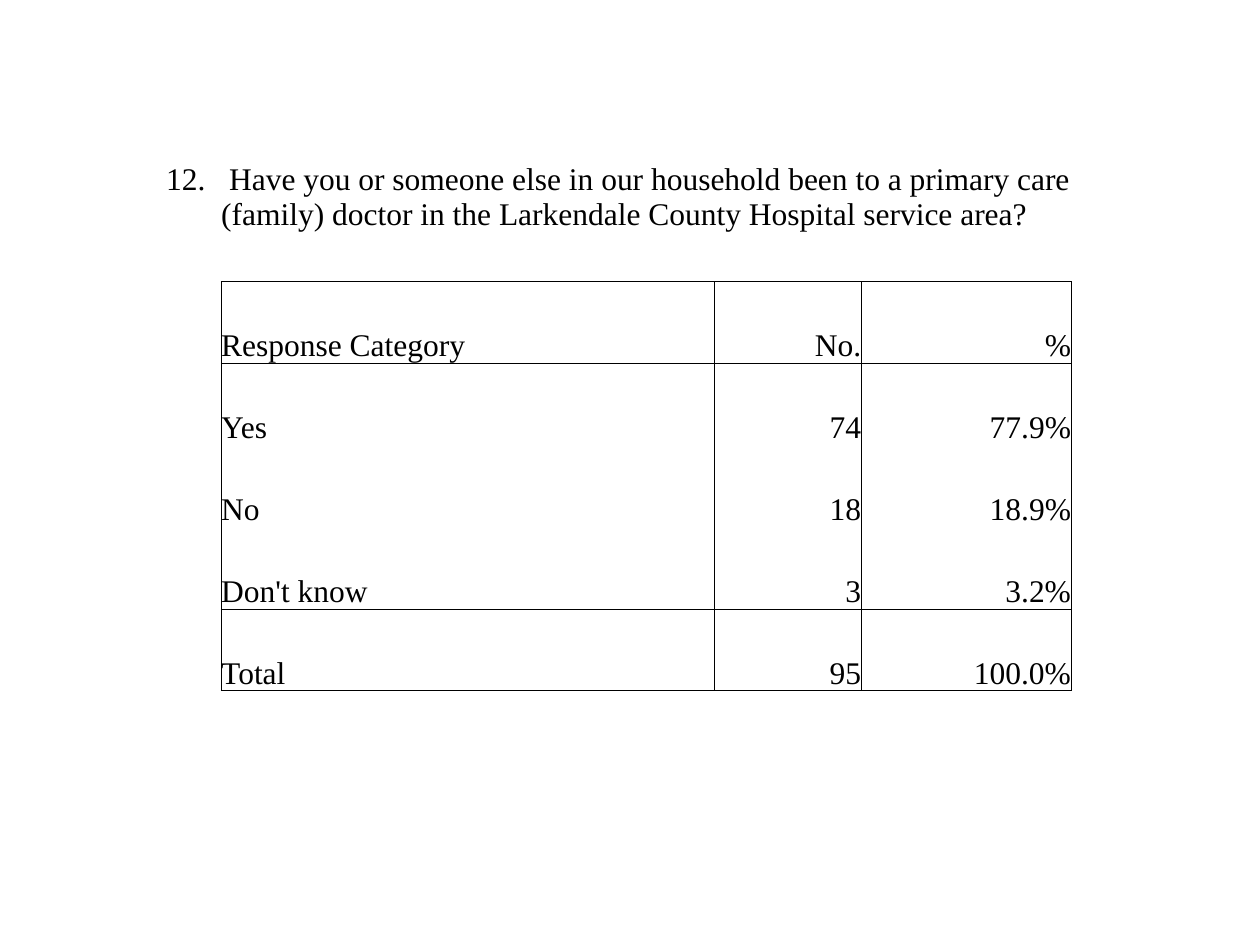
from dataclasses import dataclass

from lxml import etree
from pptx import Presentation
from pptx.dml.color import RGBColor
from pptx.enum.text import MSO_ANCHOR, PP_ALIGN
from pptx.oxml.ns import qn
from pptx.util import Cm, Pt

LEFT, RIGHT = PP_ALIGN.LEFT, PP_ALIGN.RIGHT
TOP, BOTTOM = MSO_ANCHOR.TOP, MSO_ANCHOR.BOTTOM


@dataclass(frozen=True)
class Theme:
    font: str = "Times New Roman"
    size: float = 18
    ink: str = "000000"
    line: float = 0.5


THEME = Theme()
NUMBER = "12."
QUESTION = (" Have you or someone else in our household been to a primary care "
            "(family) doctor in the Larkendale County Hospital service area?")
RESPONSES = [
    ("Response Category", "No.", "%"),
    ("Yes", "74", "77.9%"),
    ("No", "18", "18.9%"),
    ("Don't know", "3", "3.2%"),
    ("Total", "95", "100.0%"),
]
COL_WIDTHS = (1.28, 9.94, 2.96, 4.23)
QUESTION_HEIGHT, GAP_HEIGHT, RESPONSE_HEIGHT = 0.84, 0.99, 1.65
FIRST_RESPONSE = 2


def set_borders(cell, sides):
    tc_pr = cell._tc.get_or_add_tcPr()
    for side in "LRTB":
        ln = etree.SubElement(tc_pr, qn(f"a:ln{side}"), w=str(Pt(THEME.line)))
        if side in sides:
            fill = etree.SubElement(ln, qn("a:solidFill"))
            etree.SubElement(fill, qn("a:srgbClr"), val=THEME.ink)
        else:
            etree.SubElement(ln, qn("a:noFill"))


def response_sides(row, col):
    last = FIRST_RESPONSE + len(RESPONSES) - 1
    ruled = {FIRST_RESPONSE, FIRST_RESPONSE + 1, last, last + 1}
    if col == 0:
        return "R" if row >= FIRST_RESPONSE else ""
    sides = "LR" if row >= FIRST_RESPONSE else ""
    return sides + "T" * (row in ruled) + "B" * (row + 1 in ruled)


def write_cell(cell, text="", align=LEFT, anchor=BOTTOM, sides="", margin_right=0):
    set_borders(cell, sides)
    cell.fill.background()
    cell.margin_left = cell.margin_top = cell.margin_bottom = 0
    cell.margin_right = Cm(margin_right)
    cell.vertical_anchor = anchor
    p = cell.text_frame.paragraphs[0]
    p.text = text
    p.alignment = align
    p.font.name = THEME.font
    p.font.size = Pt(THEME.size)
    p.font.color.rgb = RGBColor.from_string(THEME.ink)


def add_question_table(s, left, top, width, height):
    heights = [QUESTION_HEIGHT, GAP_HEIGHT] + [RESPONSE_HEIGHT] * len(RESPONSES)
    table = s.shapes.add_table(len(heights), len(COL_WIDTHS), Cm(left), Cm(top),
                               Cm(width), Cm(height)).table
    table.first_row = table.horz_banding = False
    for column, col_width in zip(table.columns, COL_WIDTHS):
        column.width = Cm(col_width)
    for row, row_height in zip(table.rows, heights):
        row.height = Cm(row_height)

    texts = [(NUMBER, QUESTION, "", ""), ("",) * 4]
    texts += [("", *response) for response in RESPONSES]
    for r, row_texts in enumerate(texts):
        for c, text in enumerate(row_texts):
            is_number = (r, c) == (0, 0)
            write_cell(table.cell(r, c), text,
                       align=RIGHT if c > 1 or is_number else LEFT,
                       anchor=TOP if is_number else BOTTOM,
                       sides=response_sides(r, c),
                       margin_right=0.32 if is_number else 0)
    table.cell(0, 1).merge(table.cell(0, 3))


def main():
    prs = Presentation()
    prs.slide_width, prs.slide_height = Cm(25.4), Cm(19.05)
    s = prs.slides.add_slide(prs.slide_layouts[6])
    add_question_table(s, 3.18, 3.28, sum(COL_WIDTHS), 11.51)
    prs.save("out.pptx")


if __name__ == "__main__":
    main()
